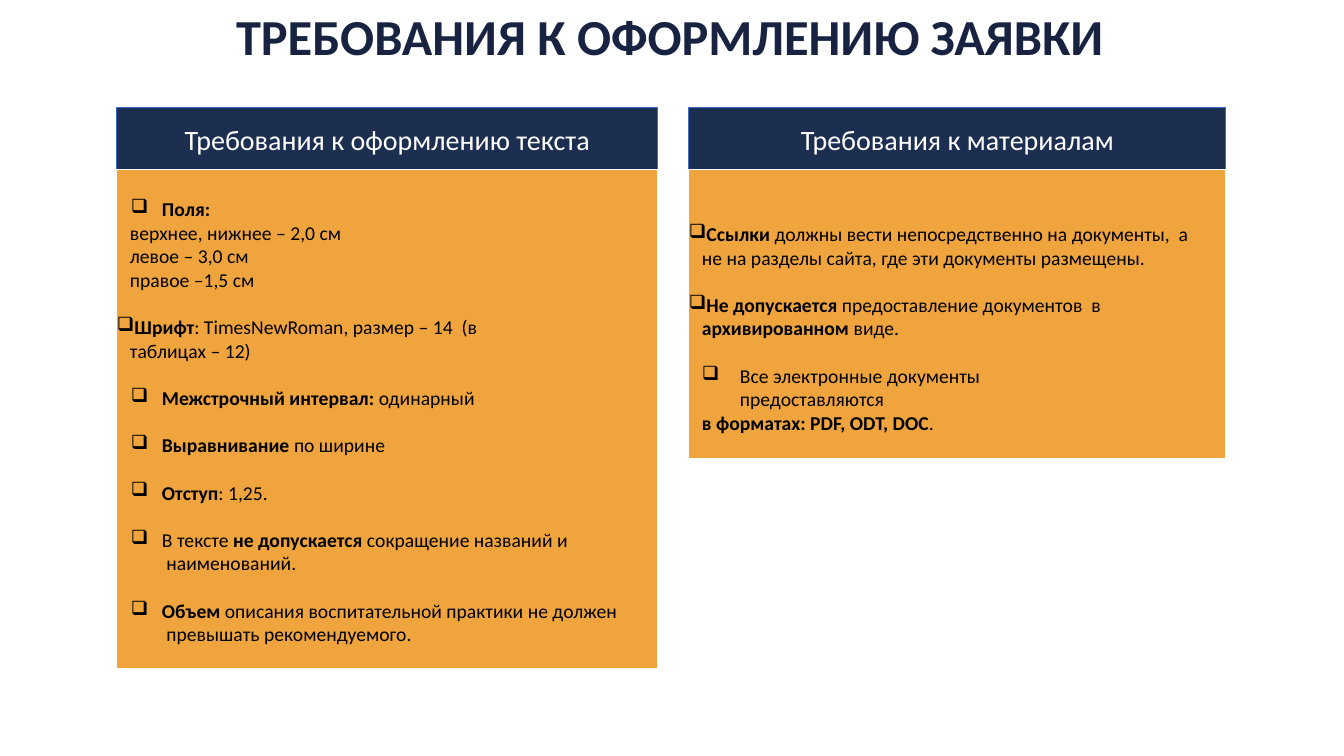
"""Builds a slide with the formatting requirements for an application."""
from lxml import etree
from pptx import Presentation
from pptx.dml.color import RGBColor
from pptx.enum.shapes import MSO_SHAPE
from pptx.enum.text import MSO_ANCHOR, MSO_AUTO_SIZE, PP_ALIGN
from pptx.oxml.ns import qn
from pptx.util import Emu, Pt

RECTANGLE = MSO_SHAPE.RECTANGLE
TOP, MIDDLE = MSO_ANCHOR.TOP, MSO_ANCHOR.MIDDLE
LEFT, CENTER = PP_ALIGN.LEFT, PP_ALIGN.CENTER
NO_AUTOFIT = MSO_AUTO_SIZE.NONE

FONT = "Calibri"
COLORS = {"title": "172340", "header": "1C2F51", "header_line": "3E6DC3",
          "body": "EFA43E", "white": "FFFFFF", "black": "000000"}
BULLET = "❑"
GAP_PT = 17
HEADER_TOP, HEADER_HEIGHT = 108, 62
BODY_TOP = HEADER_TOP + HEADER_HEIGHT

# Each paragraph: style, gap above, right margin, runs of (text, bold).
INDENTS = {"plain": (13, 0), "tight": (13, -13), "list": (45, -31), "wide": (51, -38)}
TITLE = "ТРЕБОВАНИЯ К ОФОРМЛЕНИЮ ЗАЯВКИ"
TEXT_RULES = [
    ("list", False, 0, [("Поля:", True)]),
    ("plain", False, 0, [("верхнее, нижнее – 2,0 см", False)]),
    ("plain", False, 0, [("левое – 3,0 см", False)]),
    ("plain", False, 0, [("правое –1,5 см", False)]),
    ("tight", True, 150, [("Шрифт", True),
                          (": TimesNewRoman, размер – 14  (в таблицах – 12)", False)]),
    ("list", True, 0, [("Межстрочный интервал: ", True), ("одинарный", False)]),
    ("list", True, 0, [("Выравнивание ", True), ("по ширине", False)]),
    ("list", True, 0, [("Отступ", True), (": 1,25.", False)]),
    ("list", True, 0, [("В тексте ", False), ("не допускается ", True),
                       ("сокращение названий и\n наименований.", False)]),
    ("list", True, 0, [("Объем ", True),
                       ("описания воспитательной практики не должен\n"
                        " превышать рекомендуемого.", False)]),
]
MATERIAL_RULES = [
    ("tight", False, 30, [("Ссылки ", True),
                          ("должны вести непосредственно на документы,  а не на "
                           "разделы сайта, где эти документы размещены.", False)]),
    ("tight", True, 0, [("Не допускается ", True), ("предоставление документов  в ", False),
                        ("архивированном ", True), ("виде.", False)]),
    ("wide", True, 200, [("Все электронные документы предоставляются", False)]),
    ("plain", False, 0, [("в форматах: PDF, ODT, DOC", True), (".", False)]),
]
# Each column: heading, left, width, body height, inset above the text, paragraphs.
COLUMNS = [
    ("Требования к оформлению текста", 117, 541, 499, 27, TEXT_RULES),
    ("Требования к материалам", 689, 537, 289, 52, MATERIAL_RULES),
]


def px(length):
    return Emu(round(length * 914400 / 100.8))


def prepare(frame, top_inset, anchor):
    frame.margin_left = frame.margin_right = frame.margin_bottom = 0
    frame.margin_top = px(top_inset)
    frame.word_wrap = True
    frame.auto_size = NO_AUTOFIT
    frame.vertical_anchor = anchor


def add_run(paragraph, text, size, color, bold=False):
    run = paragraph.add_run()
    run.text = text
    run.font.name = FONT
    run.font.size = Pt(size)
    run.font.bold = bold
    run.font.color.rgb = RGBColor.from_string(COLORS[color])


def add_panel(slide, box, fill, line):
    panel = slide.shapes.add_shape(RECTANGLE, *map(px, box))
    panel.shadow.inherit = False
    panel.fill.solid()
    panel.fill.fore_color.rgb = RGBColor.from_string(COLORS[fill])
    panel.line.color.rgb = RGBColor.from_string(COLORS[line])
    panel.line.width = Pt(0.72)
    return panel.text_frame


def add_rule(paragraph, style, gap, right, runs):
    paragraph.alignment = LEFT
    paragraph.space_before = Pt(GAP_PT if gap else 0)
    margin, indent = INDENTS[style]
    properties = paragraph._p.get_or_add_pPr()
    for name, length in (("marL", margin), ("marR", right), ("indent", indent)):
        properties.set(name, str(px(length)))
    if style != "plain":
        etree.SubElement(properties, qn("a:buChar")).set("char", BULLET)
    for text, bold in runs:
        for number, line in enumerate(text.split("\n")):
            if number:
                paragraph.add_line_break()
            add_run(paragraph, line, 14, "black", bold)


def add_column(slide, heading, left, width, body_height, inset, rules):
    header = add_panel(slide, (left, HEADER_TOP, width, HEADER_HEIGHT),
                       "header", "header_line")
    prepare(header, 0, MIDDLE)
    header.paragraphs[0].alignment = CENTER
    add_run(header.paragraphs[0], heading, 20, "white")

    body = add_panel(slide, (left, BODY_TOP, width, body_height), "body", "white")
    prepare(body, inset, TOP)
    for number, rule in enumerate(rules):
        add_rule(body.add_paragraph() if number else body.paragraphs[0], *rule)


def main():
    deck = Presentation()
    deck.slide_width, deck.slide_height = px(1344), px(756)
    slide = deck.slides.add_slide(deck.slide_layouts[5])

    title = slide.shapes.title
    title.left, title.top, title.width, title.height = map(px, (236, 4, 872, 64))
    prepare(title.text_frame, 1, TOP)
    title.text_frame.word_wrap = False
    heading = title.text_frame.paragraphs[0]
    heading.alignment = LEFT
    add_run(heading, TITLE, 36, "title", True)

    for column in COLUMNS:
        add_column(slide, *column)
    deck.save("out.pptx")


if __name__ == "__main__":
    main()
